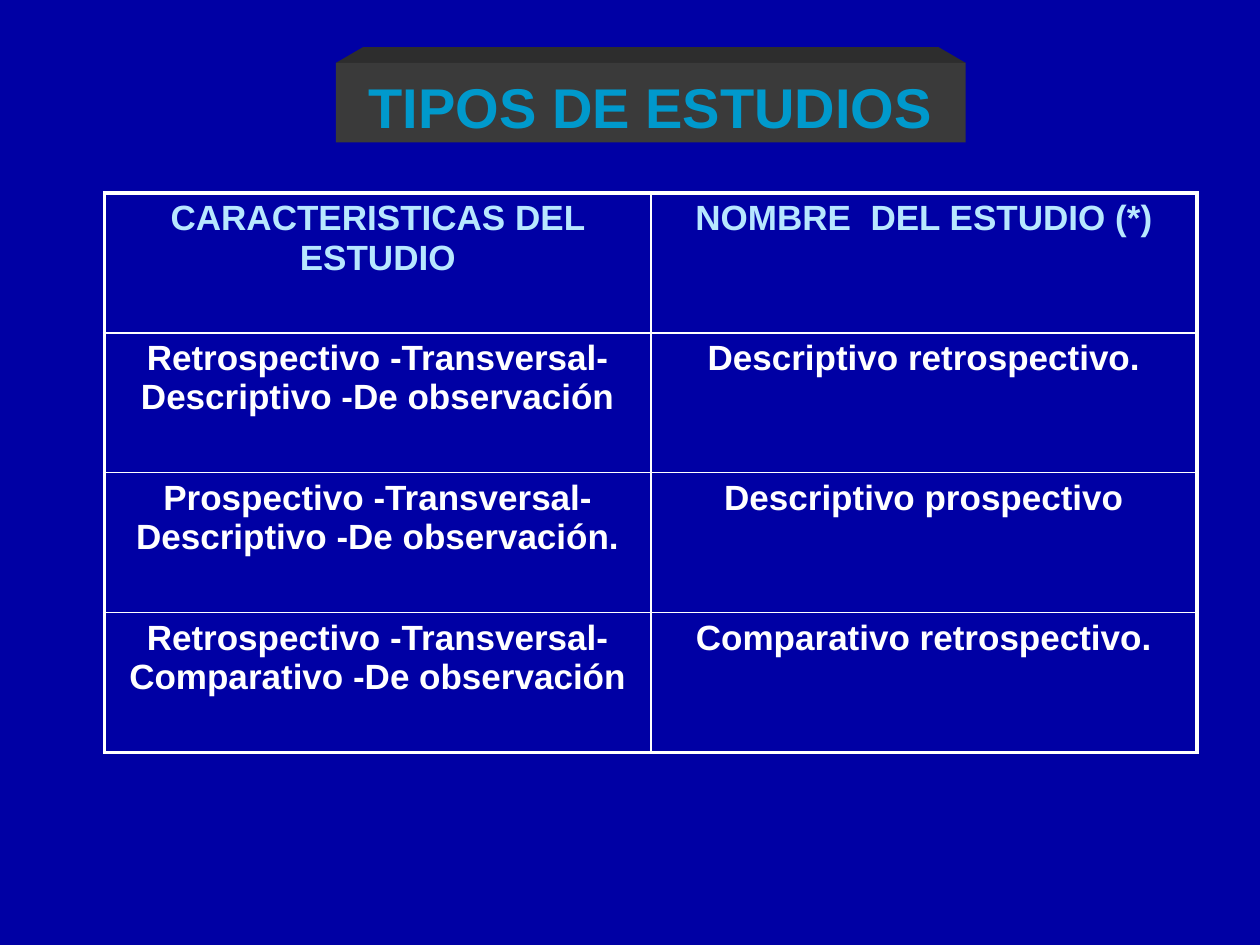
from lxml.etree import SubElement
from pptx import Presentation
from pptx.dml.color import RGBColor
from pptx.enum.shapes import MSO_SHAPE
from pptx.enum.text import MSO_ANCHOR, PP_ALIGN
from pptx.oxml.ns import qn
from pptx.util import Cm, Pt

COLORS = {
    "background": "0000A4",
    "title_front": "3A3A3A",
    "title_top": "2D2D2D",
    "title_text": "0099CC",
    "header_text": "B7E7FF",
    "body_text": "FFFFFF",
    "border": "FFFFFF",
}
ROWS = [
    ("CARACTERISTICAS DEL ESTUDIO", "NOMBRE  DEL ESTUDIO (*)"),
    ("Retrospectivo -Transversal-Descriptivo -De observación", "Descriptivo retrospectivo."),
    ("Prospectivo -Transversal-Descriptivo -De observación.", "Descriptivo prospectivo"),
    ("Retrospectivo -Transversal-Comparativo -De observación", "Comparativo retrospectivo."),
]
OUTER_BORDER, INNER_BORDER = Pt(2.25), Pt(1)


def color(name):
    """Return the named colour."""
    return RGBColor.from_string(COLORS[name])


def write_text(text_frame, text, size, color_name):
    """Write one centred bold paragraph."""
    text_frame.text = text
    paragraph = text_frame.paragraphs[0]
    paragraph.alignment = PP_ALIGN.CENTER
    font = paragraph.runs[0].font
    font.name, font.size, font.bold = "Arial", Pt(size), True
    font.color.rgb = color(color_name)


def paint(shape, color_name):
    """Give a shape a plain fill without line or shadow."""
    shape.shadow.inherit = False
    shape.fill.solid()
    shape.fill.fore_color.rgb = color(color_name)
    shape.line.fill.background()


def add_title(slide, text):
    """Add the title block with its bevelled top face."""
    left, top, width, height = Cm(6.77), Cm(1.27), Cm(12.7), Cm(1.6)
    depth, inset = Cm(0.32), Cm(0.55)
    builder = slide.shapes.build_freeform(left, top)
    builder.add_line_segments([
        (left + inset, top - depth),
        (left + width - inset, top - depth),
        (left + width, top),
    ])
    paint(builder.convert_to_shape(), "title_top")

    front = slide.shapes.add_shape(MSO_SHAPE.RECTANGLE, left, top, width, height)
    paint(front, "title_front")
    text_frame = front.text_frame
    text_frame.word_wrap = True
    text_frame.vertical_anchor = MSO_ANCHOR.TOP
    text_frame.margin_top, text_frame.margin_bottom = Cm(0.2), 0
    write_text(text_frame, text, 32, "title_text")


def set_borders(cell, widths):
    """Draw the four cell borders, given as widths by side."""
    properties = cell._tc.get_or_add_tcPr()
    for side, width in widths.items():
        line = SubElement(properties, qn(f"a:ln{side}"), w=str(int(width)))
        fill = SubElement(line, qn("a:solidFill"))
        SubElement(fill, qn("a:srgbClr"), val=COLORS["border"])


def add_studies_table(slide, rows):
    """Add the table of studies with a heavier outer frame."""
    row_count, column_count = len(rows), len(rows[0])
    column_width, row_height = Cm(11.01), Cm(2.82)
    table = slide.shapes.add_table(
        row_count, column_count, Cm(2.11), Cm(3.89),
        column_width * column_count, row_height * row_count,
    ).table
    table.first_row = table.horz_banding = False
    for row_index, texts in enumerate(rows):
        for column_index, text in enumerate(texts):
            cell = table.cell(row_index, column_index)
            write_text(cell.text_frame, text, 20,
                       "body_text" if row_index else "header_text")
            outer = {
                "L": column_index == 0,
                "R": column_index == column_count - 1,
                "T": row_index == 0,
                "B": row_index == row_count - 1,
            }
            set_borders(cell, {side: OUTER_BORDER if is_outer else INNER_BORDER
                               for side, is_outer in outer.items()})
            cell.fill.background()


def main():
    """Build and save the presentation."""
    presentation = Presentation()
    presentation.slide_width, presentation.slide_height = Cm(25.4), Cm(19.05)
    slide = presentation.slides.add_slide(presentation.slide_layouts[6])
    slide.background.fill.solid()
    slide.background.fill.fore_color.rgb = color("background")
    add_studies_table(slide, ROWS)
    add_title(slide, "TIPOS DE ESTUDIOS")
    presentation.save("out.pptx")


if __name__ == "__main__":
    main()
